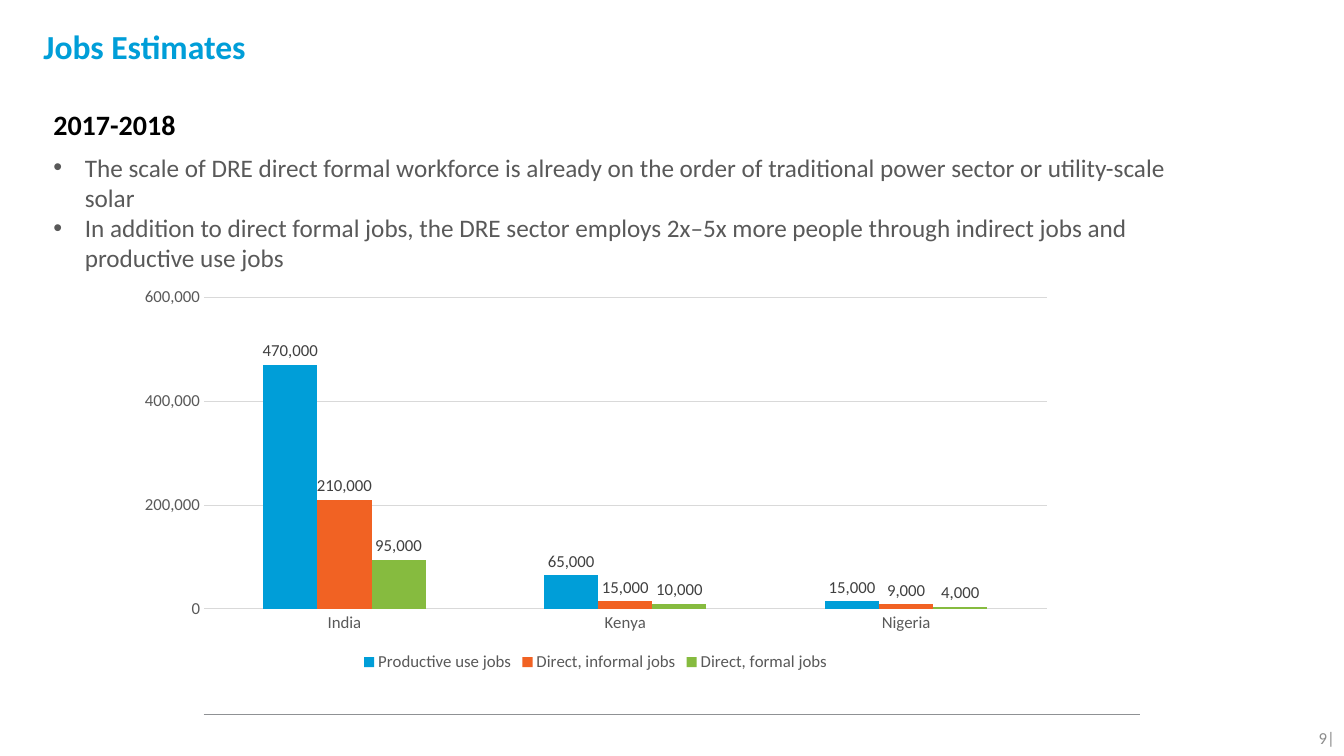
import pptx
import pptx.util
import pptx.dml.color
import pptx.chart.data
import pptx.enum.chart
import pptx.enum.shapes
import pptx.enum.text
import pptx.oxml.ns
import lxml.etree

Pt = pptx.util.Pt
RGB = pptx.dml.color.RGBColor
Align = pptx.enum.text.PP_ALIGN
Anchor = pptx.enum.text.MSO_ANCHOR
qn = pptx.oxml.ns.qn

BLUE = RGB(0x00, 0x9E, 0xD8)
ORANGE = RGB(0xF1, 0x62, 0x23)
GREEN = RGB(0x86, 0xBB, 0x3F)
BLACK = RGB(0, 0, 0)
DARK = RGB(0x40, 0x40, 0x40)
GRAY = RGB(0x59, 0x59, 0x59)
PALE = RGB(0x8C, 0x8C, 0x8C)
RULE = RGB(0x8F, 0x91, 0x94)
GRID = RGB(0xD9, 0xD9, 0xD9)
FACE = "Calibri"

# Content
TITLE = "Jobs Estimates"
YEARS = "2017-2018"
POINTS = [
    "The scale of DRE direct formal workforce is already on the order of "
    "traditional power sector or utility-scale solar",
    "In addition to direct formal jobs, the DRE sector employs 2x–5x more "
    "people through indirect jobs and productive use jobs",
]
PAGE = "9|"
LANDS = ["India", "Kenya", "Nigeria"]
JOBS = [
    ("Productive use jobs", BLUE, (470000, 65000, 15000)),
    ("Direct, informal jobs", ORANGE, (210000, 15000, 9000)),
    ("Direct, formal jobs", GREEN, (95000, 10000, 4000)),
]
FORMAT = "#,##0"


def style(font, size, color, bold=False):
    font.name, font.size, font.bold = FACE, Pt(size), bold
    font.color.rgb = color


def add_text(slide, area, lines, size, color, bold=False, bullet=False):
    box = slide.shapes.add_textbox(*map(Pt, area))
    frame = box.text_frame
    frame.word_wrap = True
    frame.text = "\n".join(lines)
    for para in frame.paragraphs:
        if bullet:
            props = para._p.get_or_add_pPr()
            props.set("marL", str(Pt(22.5)))
            props.set("indent", str(Pt(-22.5)))
            for tag, key, value in (("a:buFont", "typeface", "Arial"),
                                    ("a:buChar", "char", "•")):
                lxml.etree.SubElement(props, qn(tag)).set(key, value)
        style(para.font, size, color, bold)
    return frame


def add_chart(slide, area):
    data = pptx.chart.data.CategoryChartData(number_format=FORMAT)
    data.categories = LANDS
    for name, _, values in JOBS:
        data.add_series(name, values)
    kind = pptx.enum.chart.XL_CHART_TYPE.COLUMN_CLUSTERED
    chart = slide.shapes.add_chart(kind, *map(Pt, area), data).chart
    style(chart.font, 10, BLACK)
    chart.has_title = False

    # Bars and labels
    plot = chart.plots[0]
    plot.gap_width, plot.overlap = 219, 0
    plot.vary_by_categories = False
    for series, (_, color, _) in zip(plot.series, JOBS):
        series.format.fill.solid()
        series.format.fill.fore_color.rgb = color
        series.invert_if_negative = False
        labels = series.data_labels
        labels.show_value = True
        labels.number_format = FORMAT
        labels.number_format_is_linked = False
        labels.position = pptx.enum.chart.XL_LABEL_POSITION.OUTSIDE_END
        style(labels.font, 12, DARK)

    # Axes
    lands, scale = chart.category_axis, chart.value_axis
    none = pptx.enum.chart.XL_TICK_MARK.NONE
    for axis in (lands, scale):
        axis.major_tick_mark = axis.minor_tick_mark = none
        style(axis.tick_labels.font, 12, GRAY)
    scale.minimum_scale, scale.maximum_scale = 0, 600000
    scale.major_unit = 200000
    scale.tick_labels.number_format = FORMAT
    scale.tick_labels.number_format_is_linked = False
    scale.format.line.fill.background()
    scale.has_major_gridlines = True
    for line in (lands.format.line, scale.major_gridlines.format.line):
        line.color.rgb, line.width = GRID, Pt(0.75)

    # Legend
    chart.has_legend = True
    chart.legend.position = pptx.enum.chart.XL_LEGEND_POSITION.BOTTOM
    chart.legend.include_in_layout = False
    style(chart.legend.font, 12, GRAY)


def main():
    deck = pptx.Presentation()
    deck.slide_width, deck.slide_height = Pt(960), Pt(540)
    slide = deck.slides.add_slide(deck.slide_layouts[6])

    # Footer rule
    straight = pptx.enum.shapes.MSO_CONNECTOR.STRAIGHT
    rule = slide.shapes.add_connector(
        straight, Pt(145.5), Pt(510.5), Pt(814.5), Pt(510.5))
    rule.line.color.rgb, rule.line.width = RULE, Pt(0.75)
    props = rule._element.find(qn("p:spPr"))
    lxml.etree.SubElement(props, qn("a:effectLst"))

    # Text
    title = add_text(slide, (31, 15, 888.5, 62.5), [TITLE], 24, BLUE, True)
    title.margin_left = title.margin_right = 0
    add_text(slide, (31, 73.5, 646.5, 31.5), [YEARS], 20, BLACK, True)
    add_text(slide, (31, 105, 826.5, 94.5), POINTS, 18, GRAY, bullet=True)
    page = add_text(slide, (899.5, 512.5, 61, 29), [PAGE], 12, PALE)
    page.vertical_anchor = Anchor.MIDDLE
    page.paragraphs[0].alignment = Align.RIGHT

    add_chart(slide, (90, 199.5, 671, 283.5))
    deck.save("out.pptx")


if __name__ == "__main__":
    main()
